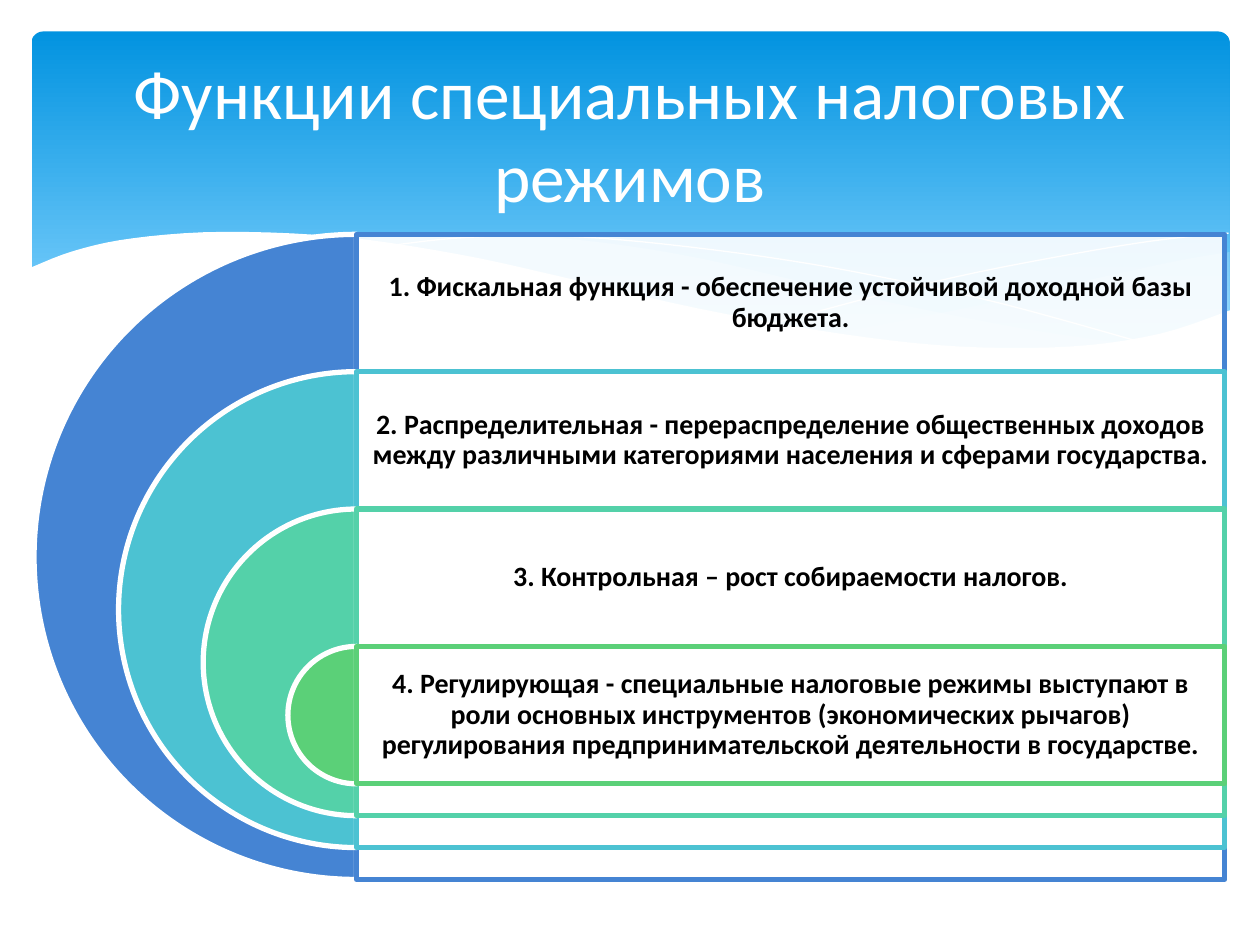
from dataclasses import dataclass

from lxml.etree import SubElement
from pptx import Presentation
from pptx.dml.color import RGBColor
from pptx.enum.shapes import MSO_SHAPE
from pptx.enum.text import MSO_ANCHOR, PP_ALIGN
from pptx.oxml.ns import qn
from pptx.shapes.autoshape import Shape
from pptx.slide import Slide
from pptx.util import Inches, Pt

COLORS = {
    "white": "FFFFFF", "black": "000000", "pale": "C6E7FC",
    "sky_top": "0293E0", "sky_bottom": "83D3FE",
    "blue": "4584D3", "cyan": "4CC2D2", "teal": "54D1A9", "green": "5BD078",
}
FONT = "Calibri"
Points = list[tuple[float, float]]


@dataclass
class Wave:
    curve: Points
    fill: str | None = None
    opacity: int = 100
    corners: tuple[tuple[float, float], ...] = ()


@dataclass
class Function:
    text: str
    color: str


WAVES = [
    Wave([(9.76, 2), (9.35, 2.07), (8.61, 2.23), (7.79, 2.42), (6.61, 2.65)], "pale", 29,
         ((7.05, 2.71), (7.57, 2.76), (8.14, 2.78), (8.63, 2.75), (9.05, 2.69),
          (9.42, 2.59), (9.76, 2.47))),
    Wave([(8.93, 2.73), (8.07, 2.6), (7.06, 2.4), (6.29, 2.22), (5.55, 2.05), (4.89, 1.94),
          (4.2, 1.87), (3.61, 1.85), (2.86, 1.91), (3.62, 2.03), (4.49, 2.22), (5.3, 2.4),
          (6.18, 2.58), (6.95, 2.7), (7.61, 2.77), (8.28, 2.78), (8.93, 2.73)], "pale", 40),
    Wave([(3.09, 1.95), (3.63, 1.89), (4.33, 1.87), (5.1, 1.92), (6.08, 2.04),
          (6.95, 2.19), (7.95, 2.41), (9.07, 2.72)]),
    Wave([(6.13, 2.57), (6.95, 2.35), (7.76, 2.16), (8.66, 1.99), (9.24, 1.9), (9.75, 1.85)]),
    Wave([(0.23, 2.13), (0.59, 1.99), (1.06, 1.89), (1.77, 1.84), (2.71, 1.88), (3.65, 2.02),
          (4.47, 2.2), (5.55, 2.45), (6.68, 2.65), (7.61, 2.75), (8.5, 2.75), (9.2, 2.65),
          (9.77, 2.46)], "white", 100, ((9.77, 3.29), (0.23, 3.29))),
]
FUNCTIONS = [
    Function("1. Фискальная функция - обеспечение устойчивой доходной базы бюджета.", "blue"),
    Function("2. Распределительная - перераспределение общественных доходов между "
             "различными категориями населения и сферами государства.", "cyan"),
    Function("3. Контрольная – рост собираемости налогов.", "teal"),
    Function("4. Регулирующая - специальные налоговые режимы выступают в роли основных "
             "инструментов (экономических рычагов) регулирования предпринимательской "
             "деятельности в государстве.", "green"),
]
ROWS_TOP, ROW_HEIGHT = 1.86, 1.09
OUTER_SIZE, SIZE_STEP = 5.12, 1.343
ROWS_LEFT, ROWS_WIDTH = 2.83, 6.89


def rgb(name: str) -> RGBColor:
    return RGBColor.from_string(COLORS[name])


def paint(shape: Shape, fill: str | None, line: str | None = None,
          width: float = 3, opacity: int = 100) -> None:
    shape.shadow.inherit = False
    if fill:
        shape.fill.solid()
        shape.fill.fore_color.rgb = rgb(fill)
        if opacity < 100:
            color = shape.fill._xPr.find(f".//{qn('a:srgbClr')}")
            SubElement(color, qn("a:alpha"), val=str(opacity * 1000))
    else:
        shape.fill.background()
    if line:
        shape.line.color.rgb = rgb(line)
        shape.line.width = Pt(width)
    else:
        shape.line.fill.background()


def smooth(points: Points, steps: int = 5) -> Points:
    """Sample a Catmull-Rom curve that passes through every point."""
    padded = [points[0], *points, points[-1]]
    curve = [points[0]]
    for a, b, c, d in zip(padded, padded[1:], padded[2:], padded[3:]):
        for step in range(1, steps + 1):
            t = step / steps
            x, y = (q + t * (r - p) / 2 + t**2 * (2 * p - 5 * q + 4 * r - s) / 2
                    + t**3 * (3 * q - p - 3 * r + s) / 2
                    for p, q, r, s in zip(a, b, c, d))
            curve.append((x, y))
    return curve


def add_wave(page: Slide, wave: Wave) -> None:
    points = [(Inches(x), Inches(y)) for x, y in [*smooth(wave.curve), *wave.corners]]
    builder = page.shapes.build_freeform(*points[0])
    builder.add_line_segments(points[1:], close=wave.fill is not None)
    line = None if wave.fill else "white"
    paint(builder.convert_to_shape(), wave.fill, line, 0, wave.opacity)


def add_text(page: Slide, text: str, left: float, top: float, width: float, height: float,
             size: float, color: str, bold: bool = False, spacing: float = 1,
             inset: float | None = None) -> None:
    box = page.shapes.add_textbox(Inches(left), Inches(top), Inches(width), Inches(height))
    frame = box.text_frame
    frame.word_wrap = True
    frame.vertical_anchor = MSO_ANCHOR.MIDDLE
    if inset is not None:
        frame.margin_left = frame.margin_right = Inches(inset)
        frame.margin_top = frame.margin_bottom = Inches(inset)
    para = frame.paragraphs[0]
    para.text = text
    para.alignment = PP_ALIGN.CENTER
    para.line_spacing = spacing
    para.font.name, para.font.size, para.font.bold = FONT, Pt(size), bold
    para.font.color.rgb = rgb(color)


def add_header(page: Slide) -> None:
    header = page.shapes.add_shape(MSO_SHAPE.ROUNDED_RECTANGLE, Inches(0.25), Inches(0.25),
                                   Inches(9.51), Inches(2.7))
    header.adjustments[0] = 0.034
    paint(header, None)
    header.fill.gradient()
    header.fill.gradient_angle = 270
    stops = zip(header.fill.gradient_stops, (0, 0.9), ("sky_top", "sky_bottom"))
    for stop, position, color in stops:
        stop.position = position
        stop.color.rgb = rgb(color)


def add_function(page: Slide, index: int, function: Function) -> None:
    """Draw a half disc, its frame and its text; each level is nested in the one before."""
    size = OUTER_SIZE - index * SIZE_STEP
    top = ROWS_TOP + index * ROW_HEIGHT
    disc = page.shapes.add_shape(MSO_SHAPE.PIE, Inches(ROWS_LEFT - size / 2), Inches(top),
                                 Inches(size), Inches(size))
    disc.adjustments[0], disc.adjustments[1] = 54, 162
    paint(disc, function.color, "white")
    frame = page.shapes.add_shape(MSO_SHAPE.RECTANGLE, Inches(ROWS_LEFT), Inches(top),
                                  Inches(ROWS_WIDTH), Inches(size))
    paint(frame, "white", function.color, opacity=90)
    add_text(page, function.text, ROWS_LEFT, top, ROWS_WIDTH, ROW_HEIGHT,
             16, "black", bold=True, spacing=0.9, inset=0.07)


def main() -> None:
    deck = Presentation()
    deck.slide_width, deck.slide_height = Inches(10), Inches(7.5)
    page = deck.slides.add_slide(deck.slide_layouts[6])
    add_header(page)
    for wave in WAVES:
        add_wave(page, wave)
    for index, function in enumerate(FUNCTIONS):
        add_function(page, index, function)
    add_text(page, "Функции специальных налоговых режимов", 0.5, 0.37, 9, 1.37, 39.6, "white")
    deck.save("out.pptx")


if __name__ == "__main__":
    main()
